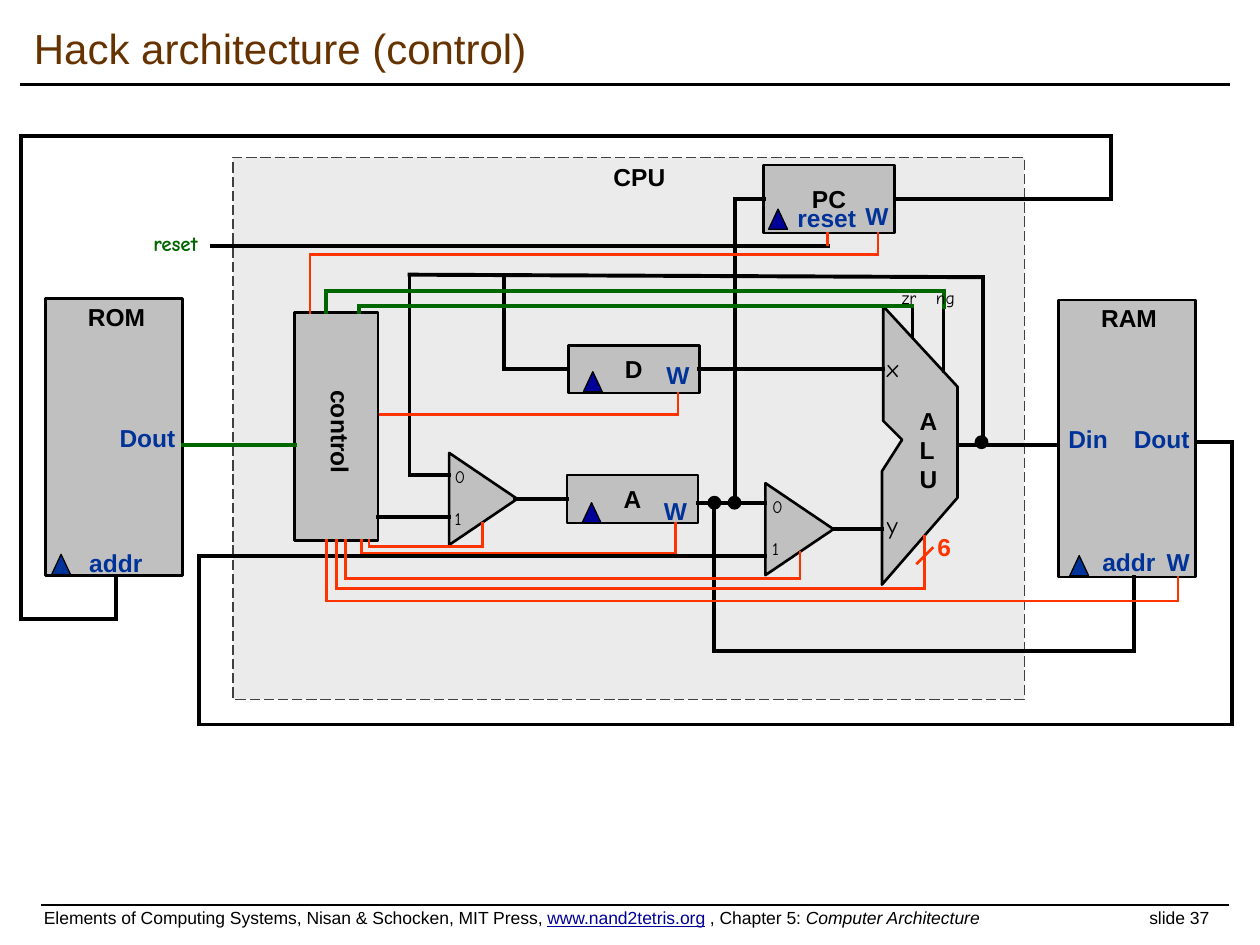
from lxml import etree
from pptx import Presentation
from pptx.dml.color import RGBColor
from pptx.enum import dml, shapes, text
from pptx.oxml.ns import qn
from pptx.util import Inches, Pt

BLACK = RGBColor(0x00, 0x00, 0x00)
DARK = RGBColor(0x40, 0x40, 0x40)
GRAY = RGBColor(0xC0, 0xC0, 0xC0)
CPU_GRAY = RGBColor(0xBF, 0xBF, 0xBF)
BROWN = RGBColor(0x66, 0x33, 0x00)
NAVY = RGBColor(0x00, 0x00, 0x99)
BLUE = RGBColor(0x00, 0x33, 0x99)
GREEN = RGBColor(0x00, 0x66, 0x00)
RED = RGBColor(0xFF, 0x33, 0x00)
SHAPE = shapes.MSO_SHAPE

prs = Presentation()
prs.slide_width, prs.slide_height = Inches(10), Inches(7.5)
s = prs.slides.add_slide(prs.slide_layouts[6])


def style(sp, fill, line, width):
    sp.shadow.inherit = False
    sp.fill.solid()
    sp.fill.fore_color.rgb = fill
    sp.line.color.rgb = line
    sp.line.width = Pt(width)
    return sp


def wire(points, color, width, start=None, end=None):
    """Join the points with straight connectors; start and end are (shape, site)."""
    last = len(points) - 2
    for i, (a, b) in enumerate(zip(points, points[1:])):
        cn = s.shapes.add_connector(shapes.MSO_CONNECTOR.STRAIGHT, *map(Inches, a + b))
        cn.line.color.rgb = color
        cn.line.width = Pt(width)
        spPr = cn._element.spPr
        spPr.find(qn("a:ln")).set("cap", "sq")
        etree.SubElement(spPr, qn("a:effectLst"))
        if start and i == 0:
            cn.begin_connect(*start)
        if end and i == last:
            cn.end_connect(*end)


# Rules above and below the content, and the CPU area
wire([(0.17, 0.67), (9.75, 0.67)], BLACK, 2)
wire([(0.33, 7.18), (9.75, 7.18)], BLACK, 1)
cpu = s.shapes.add_shape(SHAPE.RECTANGLE, Inches(1.85), Inches(1.25), Inches(6.28), Inches(4.3))
style(cpu, CPU_GRAY, DARK, 0.75)
cpu.line.dash_style = dml.MSO_LINE.LONG_DASH
cpu_color = cpu._element.spPr.find(qn("a:solidFill"))[0]
etree.SubElement(cpu_color, qn("a:alpha"), val="30000")

# ALU outline
alu_points = [(7.01, 2.43), (7.01, 3.34), (7.16, 3.49), (7, 3.74),
              (7, 4.64), (7.6, 3.95), (7.6, 3.07)]
alu_points = [(Inches(x), Inches(y)) for x, y in alu_points]
fb = s.shapes.build_freeform(*alu_points[0])
fb.add_line_segments(alu_points[1:], close=True)
style(fb.convert_to_shape(), GRAY, BLACK, 1.5)

# Memories, registers and the control unit
blocks = {}
for name, caption, x, y, w, h in [
    ("PC", "PC", 6.06, 1.31, 1.04, 0.54),
    ("RAM", "", 8.4, 2.38, 1.09, 2.2),
    ("ROM", "", 0.36, 2.37, 1.09, 2.2),
    ("A", "A", 4.5, 3.77, 1.04, 0.38),
    ("D", "D", 4.51, 2.74, 1.04, 0.38),
    ("control", "", 2.34, 2.48, 0.66, 1.81),
]:
    sp = s.shapes.add_shape(SHAPE.RECTANGLE, Inches(x), Inches(y), Inches(w), Inches(h))
    blocks[name] = style(sp, GRAY, BLACK, 1.5)
    if caption:
        tf = sp.text_frame
        tf.text = caption
        tf.word_wrap = True
        p = tf.paragraphs[0]
        p.alignment = text.PP_ALIGN.CENTER
        font = p.runs[0].font
        font.name, font.size, font.bold = "Arial", Pt(14), True
        font.color.rgb = BLACK

# Clock inputs
for x, y, color in [(6.1, 1.66, NAVY), (4.62, 3.99, NAVY), (4.63, 2.95, NAVY),
                    (8.49, 4.41, BLUE), (0.41, 4.4, BLUE)]:
    sp = s.shapes.add_shape(SHAPE.ISOSCELES_TRIANGLE, Inches(x), Inches(y), Inches(0.15), Inches(0.16))
    style(sp, color, BLACK, 0.75)

# Multiplexers
for x, y in [(5.98, 3.93), (3.47, 3.69)]:
    sp = s.shapes.add_shape(SHAPE.ISOSCELES_TRIANGLE, Inches(x), Inches(y), Inches(0.73), Inches(0.54))
    style(sp, GRAY, BLACK, 1.5).rotation = 90

# Data and address wires
pc, reg_a, reg_d = blocks["PC"], blocks["A"], blocks["D"]
wire([(7.1, 1.58), (8.82, 1.58), (8.82, 1.08), (0.17, 1.08), (0.17, 4.91), (0.92, 4.91), (0.92, 4.57)],
     BLACK, 2.25, start=(pc, 3))
wire([(5.83, 3.99), (5.83, 1.58), (6.06, 1.58)], BLACK, 2.25, end=(pc, 1))
wire([(4, 2.18), (4, 2.93), (4.51, 2.93)], BLACK, 2.25, end=(reg_d, 1))
wire([(5.55, 2.93), (7.01, 2.93)], BLACK, 2.25, start=(reg_d, 3))
wire([(4.09, 3.96), (4.5, 3.96)], BLACK, 2.25, end=(reg_a, 1))
for points in [
    [(7.6, 3.53), (8.4, 3.53)],
    [(6.61, 4.2), (7, 4.2)],
    [(5.54, 3.99), (6.07, 3.99)],
    [(7.8, 3.53), (7.8, 2.2), (3.25, 2.18), (3.25, 3.77), (3.56, 3.77)],
    [(3, 4.1), (3.56, 4.1)],
    [(9.49, 3.51), (9.78, 3.51), (9.78, 5.75), (1.58, 5.75), (1.58, 4.41), (6.07, 4.41)],
    [(5.67, 3.99), (5.67, 5.17), (9, 5.17), (9, 4.58)],
    [(1.68, 1.95), (6.57, 1.95)],
]:
    wire(points, BLACK, 2.25)
for x, y in [(7.74, 3.46), (5.78, 3.94), (5.62, 3.94)]:
    sp = s.shapes.add_shape(SHAPE.OVAL, Inches(x), Inches(y), Inches(0.1), Inches(0.1))
    style(sp, BLACK, BLACK, 0.75)

# Instruction and ALU flags
for x, y in [(7.24, 2.67), (7.49, 2.95)]:
    wire([(x, 2.44), (x, y)], BLACK, 1.75)
wire([(1.45, 3.53), (2.34, 3.53)], GREEN, 2.25)
wire([(2.85, 2.48), (2.85, 2.43), (7.24, 2.43)], GREEN, 2.25)
wire([(2.59, 2.48), (2.59, 2.31), (7.49, 2.31), (7.49, 2.44)], GREEN, 2.25)

# Control signals leaving the bottom of the control unit
for x, y, x_target, y_target in [
    (2.93, 4.34, 3.83, 4.15),
    (2.87, 4.39, 5.36, 4.15),
    (2.74, 4.59, 6.35, 4.38),
    (2.67, 4.67, 7.34, 4.26),
    (2.59, 4.77, 9.35, 4.58),
]:
    wire([(x, 4.29), (x, y), (x_target, y), (x_target, y_target)], RED, 1.5)
wire([(2.46, 2.48), (2.46, 2.02), (6.97, 2.02), (6.97, 1.85)], RED, 1.5)
wire([(3.02, 3.29), (5.38, 3.29), (5.38, 3.12)], RED, 1.5)
wire([(6.57, 1.85), (6.57, 1.94)], RED, 1.5)
wire([(7.4, 4.35), (7.28, 4.47)], RED, 1.5)

# Labels
for caption, x, y, w, h, size, color, font_name, bold in [
    ("Hack architecture (control)", 0.17, 0.09, 9.58, 0.58, 24, BROWN, "Arial", False),
    ("A\nL\nU", 7.2, 3.17, 0.46, 0.76, 14, BLACK, "Arial", True),
    ("CPU", 4.77, 1.24, 0.62, 0.34, 14, BLACK, "Arial", True),
    ("RAM", 8.64, 2.36, 0.65, 0.34, 14, BLACK, "Arial", True),
    ("ROM", 0.6, 2.35, 0.66, 0.34, 14, BLACK, "Arial", True),
    ("control", 2.43, 3.0, 0.44, 0.76, 14, BLACK, "Arial", True),
    ("W", 9.16, 4.29, 0.39, 0.33, 14, BLUE, "Arial", True),
    ("W", 5.17, 3.89, 0.39, 0.33, 14, BLUE, "Arial", True),
    ("W", 5.19, 2.81, 0.39, 0.33, 14, BLUE, "Arial", True),
    ("W", 6.77, 1.55, 0.39, 0.33, 14, BLUE, "Arial", True),
    ("Din", 8.38, 3.32, 0.52, 0.34, 14, BLUE, "Arial", True),
    ("Dout", 8.9, 3.32, 0.65, 0.34, 14, BLUE, "Arial", True),
    ("Dout", 0.85, 3.31, 0.65, 0.34, 14, BLUE, "Arial", True),
    ("addr", 8.65, 4.29, 0.63, 0.34, 14, BLUE, "Arial", True),
    ("addr", 0.61, 4.3, 0.63, 0.34, 14, BLUE, "Arial", True),
    ("reset", 6.23, 1.56, 0.67, 0.34, 14, BLUE, "Arial", True),
    ("6", 7.34, 4.17, 0.31, 0.34, 14, RED, "Arial", True),
    ("reset", 1.12, 1.78, 0.64, 0.3, 12, GREEN, "Comic Neue", True),
    ("0\n1", 6.03, 3.89, 0.29, 0.61, 10, BLACK, "Comic Neue", False),
    ("0\n1", 3.51, 3.65, 0.29, 0.61, 10, BLACK, "Comic Neue", False),
    ("x", 6.94, 2.75, 0.32, 0.34, 14, BLACK, "Comic Neue", False),
    ("y", 6.94, 4, 0.31, 0.34, 14, BLACK, "Comic Neue", False),
    ("zr", 7.06, 2.23, 0.34, 0.27, 10, BLACK, "Comic Neue", False),
    ("ng", 7.33, 2.23, 0.35, 0.27, 10, BLACK, "Comic Neue", False),
]:
    tf = s.shapes.add_textbox(Inches(x), Inches(y), Inches(w), Inches(h)).text_frame
    tf.text = caption
    tf.word_wrap = False
    if caption == "control":
        tf._txBody.bodyPr.set("vert", "eaVert")
    if size == 24:
        tf.vertical_anchor = text.MSO_ANCHOR.MIDDLE
    for p in tf.paragraphs:
        font = p.runs[0].font
        font.name, font.size, font.bold = font_name, Pt(size), bold
        font.color.rgb = color
    if caption == "0\n1":
        tf.paragraphs[1].space_before = Pt(12)

# Footer, with the slide number at a right tab
tf = s.shapes.add_textbox(Inches(0.25), Inches(7.15), Inches(9.5), Inches(0.27)).text_frame
tf.word_wrap = True
tf.vertical_anchor = text.MSO_ANCHOR.MIDDLE
p = tf.paragraphs[0]
tabs = etree.SubElement(p._p.get_or_add_pPr(), qn("a:tabLst"))
etree.SubElement(tabs, qn("a:tab"), pos=str(Inches(9.25)), algn="r")
for caption, color, underline, italic in [
    ("Elements of Computing Systems, Nisan & Schocken, MIT Press, ", BLACK, False, False),
    ("www.nand2tetris.org", NAVY, True, False),
    (" , Chapter 5: ", BLACK, False, False),
    ("Computer Architecture", BLACK, False, True),
    ("\tslide 37", BLACK, False, False),
]:
    r = p.add_run()
    r.text = caption
    r.font.name, r.font.size = "Arial", Pt(10)
    r.font.underline, r.font.italic = underline, italic
    r.font.color.rgb = color

prs.save("out.pptx")
